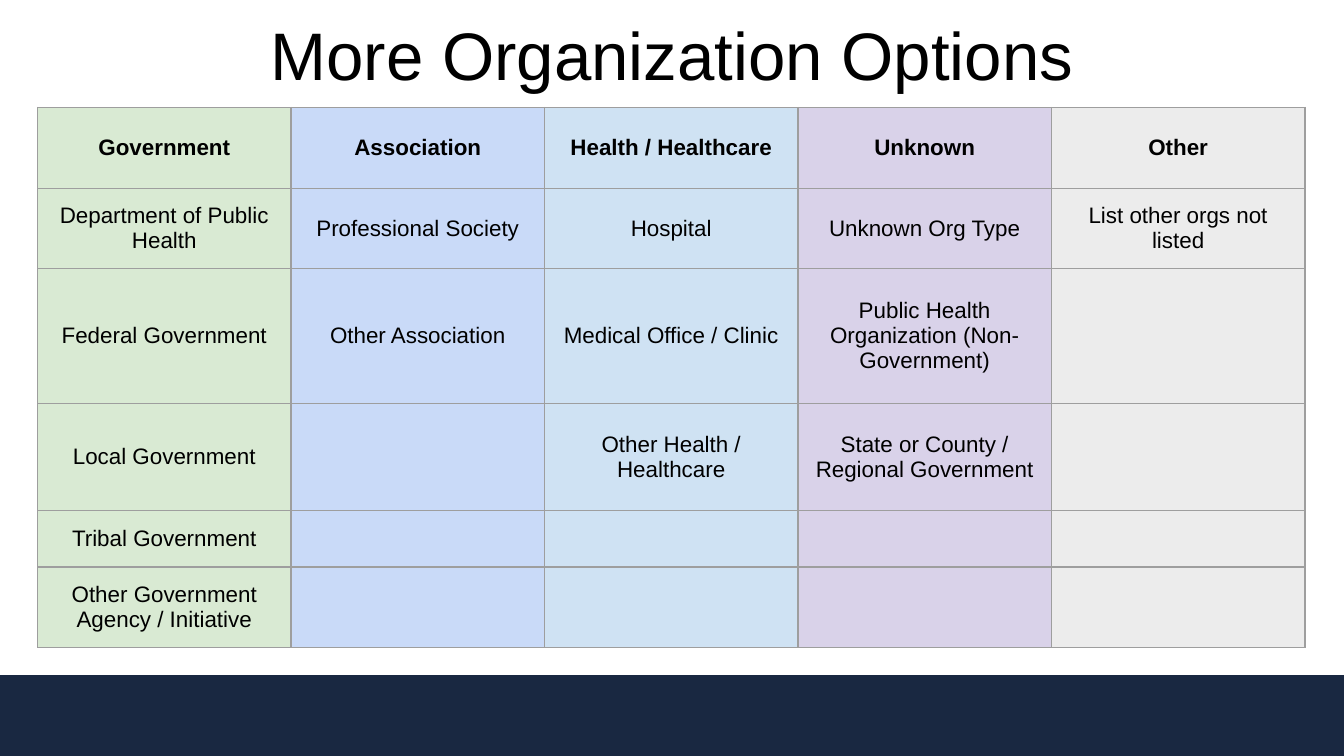
from lxml.etree import SubElement
from pptx import Presentation
from pptx.dml.color import RGBColor
from pptx.enum.shapes import MSO_SHAPE
from pptx.enum.text import MSO_ANCHOR, MSO_AUTO_SIZE, PP_ALIGN
from pptx.oxml.ns import qn
from pptx.util import Inches, Pt

COLORS = {
    "text": "000000",
    "band": "192841",
    "border": "9E9E9E",
    "Government": "D9EAD3",
    "Association": "C9DAF8",
    "Health / Healthcare": "CFE2F3",
    "Unknown": "D9D2E9",
    "Other": "ECECEC",
}
ORGANIZATIONS = {
    "Government": [
        "Department of Public Health", "Federal Government", "Local Government",
        "Tribal Government", "Other Government Agency / Initiative",
    ],
    "Association": ["Professional Society", "Other Association"],
    "Health / Healthcare": [
        "Hospital", "Medical Office / Clinic", "Other Health / Healthcare",
    ],
    "Unknown": [
        "Unknown Org Type", "Public Health Organization (Non-Government)",
        "State or County / Regional Government",
    ],
    "Other": ["List other orgs not listed"],
}
ROW_HEIGHTS = [0.6, 0.6, 1, 0.8, 0.42, 0.6]


class OrganizationSlide:
    """Holds the style and the slide, and adds each kind of element."""

    font = "Arial"
    inset = Inches(0.1)

    def __init__(self, deck):
        self.slide = deck.slides.add_slide(deck.slide_layouts[5])

    def color(self, name):
        return RGBColor.from_string(COLORS[name])

    def style(self, paragraph, size, bold=False):
        paragraph.alignment = PP_ALIGN.CENTER
        paragraph.font.name = self.font
        paragraph.font.size = Pt(size)
        paragraph.font.bold = bold
        paragraph.font.color.rgb = self.color("text")

    def set_insets(self, holder):
        holder.margin_left = holder.margin_right = self.inset
        holder.margin_top = holder.margin_bottom = self.inset
        holder.vertical_anchor = MSO_ANCHOR.MIDDLE

    def title(self, text, left, top, width, height):
        heading = self.slide.shapes.title
        heading.left, heading.top = Inches(left), Inches(top)
        heading.width, heading.height = Inches(width), Inches(height)
        frame = heading.text_frame
        frame.text = text
        frame.word_wrap = True
        frame.auto_size = MSO_AUTO_SIZE.NONE
        self.set_insets(frame)
        self.style(frame.paragraphs[0], 36)

    def band(self, left, top, width, height):
        footer = self.slide.shapes.add_shape(
            MSO_SHAPE.RECTANGLE, Inches(left), Inches(top), Inches(width), Inches(height))
        footer.shadow.inherit = False
        footer.fill.solid()
        footer.fill.fore_color.rgb = self.color("band")
        footer.line.color.rgb = self.color("band")
        footer.line.width = Pt(1.5)

    def borders(self, cell):
        properties = cell._tc.get_or_add_tcPr()
        for side in ("a:lnL", "a:lnR", "a:lnT", "a:lnB"):
            line = SubElement(properties, qn(side), w=str(Pt(0.75)))
            fill = SubElement(line, qn("a:solidFill"))
            SubElement(fill, qn("a:srgbClr"), val=COLORS["border"])

    def cell(self, cell, text, fill, bold):
        self.borders(cell)
        cell.fill.solid()
        cell.fill.fore_color.rgb = self.color(fill)
        if text:
            cell.text = text
            self.set_insets(cell)
            self.style(cell.text_frame.paragraphs[0], 12, bold)

    def table(self, groups, row_heights, left, top, width):
        grid = self.slide.shapes.add_table(
            len(row_heights), len(groups), Inches(left), Inches(top),
            Inches(width), Inches(sum(row_heights))).table
        for row, height in zip(grid.rows, row_heights):
            row.height = Inches(height)
        for column, (group, members) in enumerate(groups.items()):
            grid.columns[column].width = Inches(width / len(groups))
            entries = [group] + members
            for row in range(len(row_heights)):
                text = entries[row] if row < len(entries) else ""
                self.cell(grid.cell(row, column), text, group, bold=row == 0)


def main():
    deck = Presentation()
    deck.slide_width = Inches(10)
    deck.slide_height = deck.slide_width * 9 // 16
    page = OrganizationSlide(deck)
    page.band(0, 5.03, 10, 0.6)
    page.table(ORGANIZATIONS, ROW_HEIGHTS, 0.28, 0.8, 9.43)
    page.title("More Organization Options", 0.34, 0, 9.32, 0.8)
    deck.save("out.pptx")


if __name__ == "__main__":
    main()
